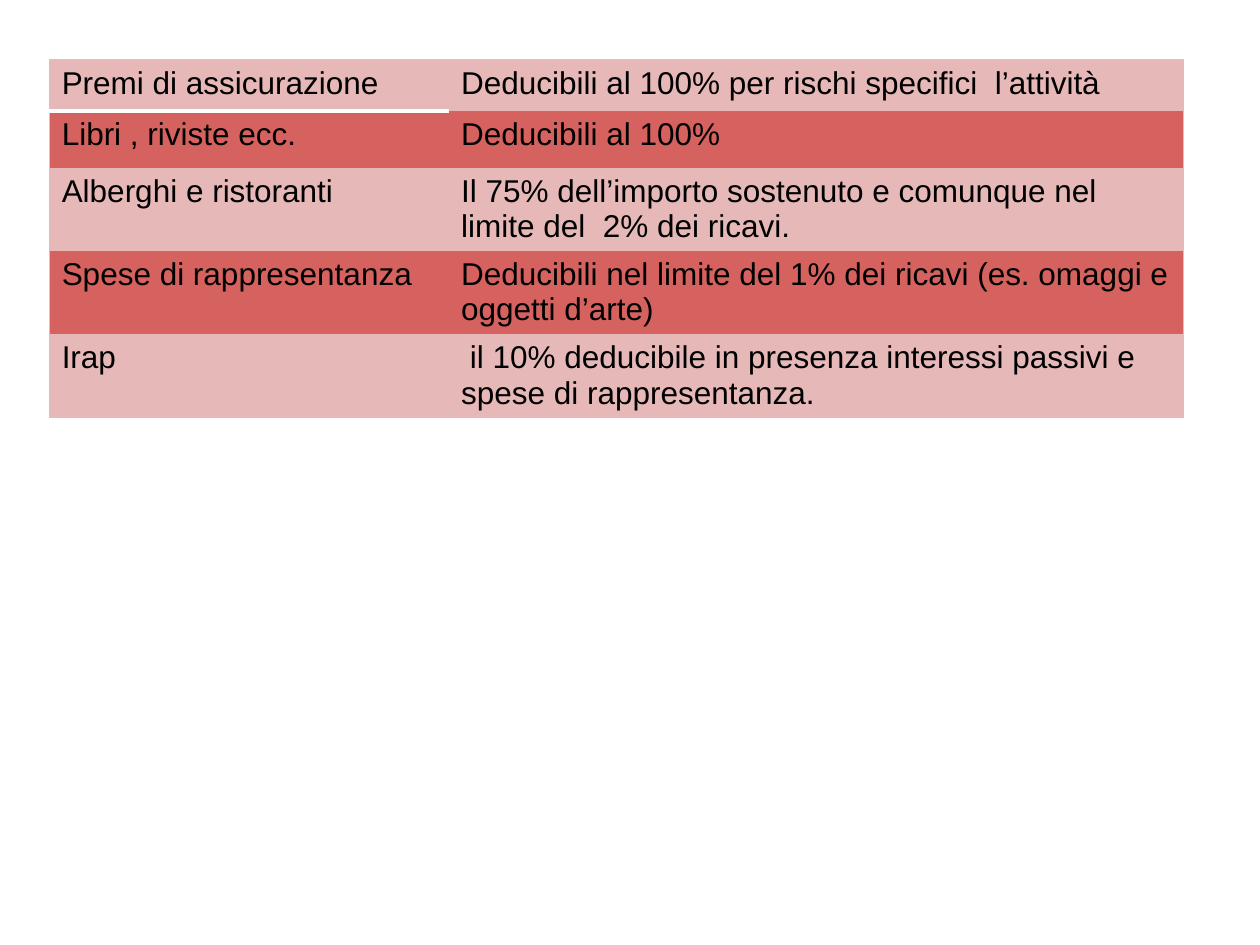
from dataclasses import dataclass

from lxml import etree
from pptx import Presentation
from pptx.dml.color import RGBColor
from pptx.oxml.ns import qn
from pptx.util import Inches, Pt

PLAIN = "{2D5ABB26-0587-4C30-8999-92F81FD0307C}"  # no style, no grid


@dataclass(frozen=True)
class Theme:
    font: str = "Arial"
    size: float = 18
    text: str = "000000"
    light: str = "E6B9B8"
    dark: str = "D5625E"
    edge: str = "DEBDBD"
    rule: str = "FFFFFF"
    thin: float = 0.75
    thick: float = 3


THEME = Theme()
COLS = (3.17, 5.83)
ROWS = (
    (0.41, "Premi di assicurazione",
     "Deducibili al 100% per rischi specifici  l’attività"),
    (0.45, "Libri , riviste ecc.", "Deducibili al 100%"),
    (0.66, "Alberghi e ristoranti",
     "Il 75% dell’importo sostenuto e comunque nel limite del  2% dei ricavi."),
    (0.66, "Spese di rappresentanza",
     "Deducibili nel limite del 1% dei ricavi (es. omaggi e oggetti d’arte)"),
    (0.66, "Irap",
     " il 10% deducibile in presenza interessi passivi e spese di rappresentanza."),
)


def add_edge(cell, side, color, width):
    props = cell._tc.get_or_add_tcPr()
    line = etree.SubElement(props, qn(f"a:ln{side}"), w=str(Pt(width)))
    fill = etree.SubElement(line, qn("a:solidFill"))
    etree.SubElement(fill, qn("a:srgbClr"), val=color)


def frame_cell(cell, row, col):
    # Outer frame, in the order the schema asks for
    last = len(ROWS) - 1
    sides = (("L", col == 0), ("R", col == 1), ("T", row == 0), ("B", row == last))
    for side, outer in sides:
        if outer:
            add_edge(cell, side, THEME.edge, THEME.thin)
    # White rule under the first label
    if row == 0 and col == 0:
        add_edge(cell, "B", THEME.rule, THEME.thick)


def fill_cell(cell, text, color):
    cell.fill.solid()
    cell.fill.fore_color.rgb = RGBColor.from_string(color)
    run = cell.text_frame.paragraphs[0].add_run()
    run.text = text
    run.font.name = THEME.font
    run.font.size = Pt(THEME.size)
    run.font.color.rgb = RGBColor.from_string(THEME.text)


def add_costs(slide):
    height = sum(row[0] for row in ROWS)
    frame = slide.shapes.add_table(
        len(ROWS), len(COLS), Inches(0.39), Inches(0.47),
        Inches(sum(COLS)), Inches(height))
    table = frame.table
    table.first_row = table.horz_banding = False
    table._tbl.tblPr.find(qn("a:tableStyleId")).text = PLAIN
    for col, width in enumerate(COLS):
        table.columns[col].width = Inches(width)
    for row, (high, *texts) in enumerate(ROWS):
        table.rows[row].height = Inches(high)
        color = THEME.dark if row % 2 else THEME.light
        for col, text in enumerate(texts):
            cell = table.cell(row, col)
            frame_cell(cell, row, col)
            fill_cell(cell, text, color)


def main():
    deck = Presentation()
    deck.slide_width, deck.slide_height = Inches(10), Inches(7.5)
    slide = deck.slides.add_slide(deck.slide_layouts[6])
    add_costs(slide)
    deck.save("out.pptx")


if __name__ == "__main__":
    main()
